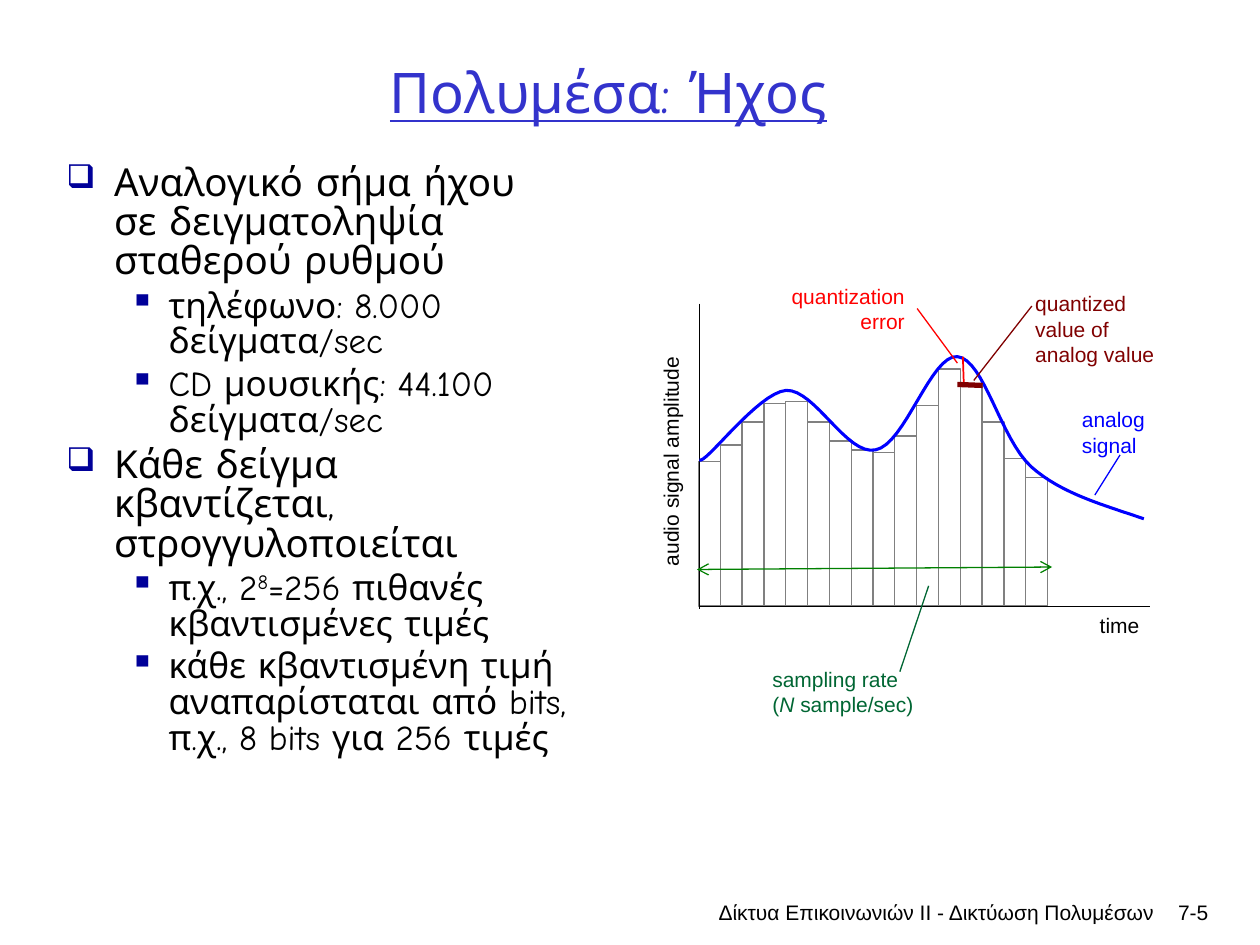
from dataclasses import dataclass

from lxml import etree
from pptx import Presentation
from pptx import util as u
from pptx.dml.color import RGBColor
from pptx.enum import shapes, text
from pptx.oxml.ns import qn

COLORS = {
    "title": "3333CC", "bullet": "000099", "ink": "000000", "bar": "808080",
    "signal": "0000FF", "error": "FF0000", "rate_arrow": "008000",
    "rate": "006633", "quantized": "800000",
}
LEFT, RIGHT, CENTER = text.PP_ALIGN.LEFT, text.PP_ALIGN.RIGHT, text.PP_ALIGN.CENTER


@dataclass
class Label:
    lines: list[str]
    at: tuple[float, float, float, float]
    color: str = "ink"
    align: text.PP_ALIGN = LEFT
    wrap: bool = True
    rotation: int = 0
    size: int = 12
    font: str = "Arial"


@dataclass
class Line:
    start: tuple[float, float]
    end: tuple[float, float]
    color: str
    width: float = 0.75
    arrows: bool = False


@dataclass
class Bullet:
    phrases: list[str]  # every second phrase is superscript
    level: int = 1


TITLE = Label(["Πολυμέσα: Ήχος"], (1.47, 0.64, 21.59, 2.41), "title", CENTER,
              size=32, font="Comic Neue")

BULLETS = [
    Bullet(["Αναλογικό σήμα ήχου σε δειγματοληψία σταθερού ρυθμού"], 0),
    Bullet(["τηλέφωνο: 8.000 δείγματα/sec"]),
    Bullet(["CD μουσικής: 44.100 δείγματα/sec"]),
    Bullet(["Κάθε δείγμα κβαντίζεται, στρογγυλοποιείται"], 0),
    Bullet(["π.χ., 2", "8", "=256 πιθανές κβαντισμένες τιμές"]),
    Bullet(["κάθε κβαντισμένη τιμή αναπαρίσταται από bits, π.χ., 8 bits για 256 τιμές"]),
]
# Per level: text size, left margin (cm), hanging indent (cm), character, bullet size (%)
LEVELS = [(22, 0.96, 0.96, "❑", 85), (20, 2.06, 0.79, "▪", 100)]

AXIS_LEFT, AXIS_BOTTOM, BAR_WIDTH = 14.1, 12.22, 0.44
BAR_TOPS = [9.3, 8.97, 8.51, 8.13, 8.1, 8.51, 8.89, 9.07,
            9.12, 8.79, 8.18, 7.44, 7.77, 8.51, 9.25, 9.63]

SIGNAL_START = (AXIS_LEFT, 9.27)
SIGNAL_CURVES = [
    ((14.2, 9.4), (15.27, 7.92), (15.85, 7.87)),
    ((16.43, 7.85), (17.07, 9.19), (17.65, 9.07)),
    ((18.24, 8.97), (18.77, 7.14), (19.3, 7.19)),
    ((19.84, 7.24), (20.17, 8.86), (20.8, 9.42)),
    ((21.41, 9.96), (22.28, 10.19), (23.06, 10.46)),
]

AXES = [
    Line((AXIS_LEFT, 6.12), (AXIS_LEFT, 12.27), "ink"),
    Line((AXIS_LEFT, AXIS_BOTTOM), (23.19, AXIS_BOTTOM), "ink"),
]
CALLOUT_LINES = [
    Line((22.58, 9.17), (22.07, 9.98), "signal"),
    Line((19.41, 7.19), (19.43, 7.77), "error", 1),
    Line((18.49, 6.22), (19.3, 7.32), "error"),
    Line((14.05, 11.48), (21.21, 11.43), "rate_arrow", arrows=True),
    Line((18.14, 13.54), (18.72, 11.81), "rate"),
    Line((19.3, 7.75), (19.81, 7.77), "quantized", 3),
    Line((20.8, 6.17), (19.63, 7.67), "quantized"),
]
RATE_LABEL = Label(["sampling rate", "("], (15.32, 13.31, 4.75, 1.27), "rate")
LABELS = [
    Label(["time"], (21.92, 12.22, 1.32, 0.76), wrap=False),
    Label(["audio signal amplitude"], (11.13, 8.89, 4.78, 0.76), wrap=False, rotation=270),
    Label(["analog", "signal"], (21.56, 8.08, 1.8, 1.3), "signal", wrap=False),
    Label(["quantization error"], (15.42, 5.59, 3.07, 1.3), "error", RIGHT),
    Label(["quantized value of", "analog value"], (20.62, 5.74, 3.25, 1.8), "quantized"),
    Label(["Δίκτυα Επικοινωνιών ΙΙ - Δικτύωση Πολυμέσων"], (11.53, 18.01, 11.99, 1.27),
          align=RIGHT),
    Label(["7-5"], (22.73, 18.01, 1.88, 1.27), align=RIGHT),
]


def rgb(name: str) -> RGBColor:
    return RGBColor.from_string(COLORS[name])


def style_span(span, size: int, font: str, color: str) -> None:
    span.font.size = u.Pt(size)
    span.font.name = font
    span.font.color.rgb = rgb(color)


def add_label(page, label: Label):
    box = page.shapes.add_textbox(*map(u.Cm, label.at))
    box.rotation = label.rotation
    frame = box.text_frame
    frame.text = "\n".join(label.lines)
    frame.word_wrap = label.wrap
    for para in frame.paragraphs:
        para.alignment = label.align
        for span in para.runs:
            style_span(span, label.size, label.font, label.color)
    return box


def add_rate_label(page) -> None:
    """Add the sampling-rate label, whose N is italic."""
    para = add_label(page, RATE_LABEL).text_frame.paragraphs[-1]
    for words, italic in (("N ", True), ("sample/sec)", False)):
        span = para.add_run()
        span.text = words
        style_span(span, RATE_LABEL.size, RATE_LABEL.font, RATE_LABEL.color)
        span.font.italic = italic


def add_line(page, line: Line) -> None:
    connector = page.shapes.add_connector(
        shapes.MSO_CONNECTOR.STRAIGHT, *map(u.Cm, line.start + line.end))
    connector.line.color.rgb = rgb(line.color)
    connector.line.width = u.Pt(line.width)
    if line.arrows:
        outline = connector.line._get_or_add_ln()
        for end in ("a:headEnd", "a:tailEnd"):
            etree.SubElement(outline, qn(end), type="arrow")
    etree.SubElement(connector._element.spPr, qn("a:effectLst"))


def outline_only(shape, color: str, width: float) -> None:
    shape.shadow.inherit = False
    shape.fill.background()
    shape.line.color.rgb = rgb(color)
    shape.line.width = u.Pt(width)


def add_bars(page) -> None:
    for index, top in enumerate(BAR_TOPS):
        box = (AXIS_LEFT - 0.02 + index * BAR_WIDTH, top, BAR_WIDTH, AXIS_BOTTOM - top)
        bar = page.shapes.add_shape(shapes.MSO_SHAPE.RECTANGLE, *map(u.Cm, box))
        outline_only(bar, "bar", 0.75)


def add_signal(page, steps: int = 16) -> None:
    """Draw the cubic Bézier curves as one finely divided open line."""
    points, start = [], SIGNAL_START
    for first, second, end in SIGNAL_CURVES:
        for step in range(1, steps + 1):
            t = step / steps
            weights = ((1 - t) ** 3, 3 * t * (1 - t) ** 2, 3 * t ** 2 * (1 - t), t ** 3)
            points.append(tuple(
                u.Cm(sum(w * value for w, value in zip(weights, values)))
                for values in zip(start, first, second, end)))
        start = end
    builder = page.shapes.build_freeform(*map(u.Cm, SIGNAL_START))
    builder.add_line_segments(points, close=False)
    outline_only(builder.convert_to_shape(), "signal", 1.75)


def set_bullet(para, level: int) -> None:
    _, margin, hanging, character, percent = LEVELS[level]
    props = para._p.get_or_add_pPr()
    props.set("marL", str(u.Cm(margin)))
    props.set("indent", str(-u.Cm(hanging)))
    color = etree.SubElement(props, qn("a:buClr"))
    etree.SubElement(color, qn("a:srgbClr"), val=COLORS["bullet"])
    etree.SubElement(props, qn("a:buSzPct"), val=str(percent * 1000))
    etree.SubElement(props, qn("a:buChar"), char=character)


def add_bullets(page) -> None:
    frame = page.shapes.add_textbox(*map(u.Cm, (1.09, 3.2, 10.59, 12.9))).text_frame
    frame.word_wrap = True
    for index, bullet in enumerate(BULLETS):
        para = frame.add_paragraph() if index else frame.paragraphs[0]
        size = LEVELS[bullet.level][0]
        set_bullet(para, bullet.level)
        para.level = bullet.level
        para.line_spacing = 0.85
        if index:
            para.space_before = u.Pt(0.2 * size)
        for position, phrase in enumerate(bullet.phrases):
            span = para.add_run()
            span.text = phrase
            style_span(span, size, "Comic Neue", "ink")
            if position % 2:
                span.font._element.set("baseline", "30000")


def main() -> None:
    deck = Presentation()
    deck.slide_width, deck.slide_height = u.Cm(25.4), u.Cm(19.05)
    page = deck.slides.add_slide(deck.slide_layouts[6])
    title = add_label(page, TITLE).text_frame
    title.vertical_anchor = text.MSO_ANCHOR.MIDDLE
    title.paragraphs[0].runs[0].font.underline = True
    add_bullets(page)
    add_bars(page)
    for line in AXES:
        add_line(page, line)
    add_signal(page)
    for line in CALLOUT_LINES:
        add_line(page, line)
    for label in LABELS:
        add_label(page, label)
    add_rate_label(page)
    deck.save("out.pptx")


if __name__ == "__main__":
    main()
